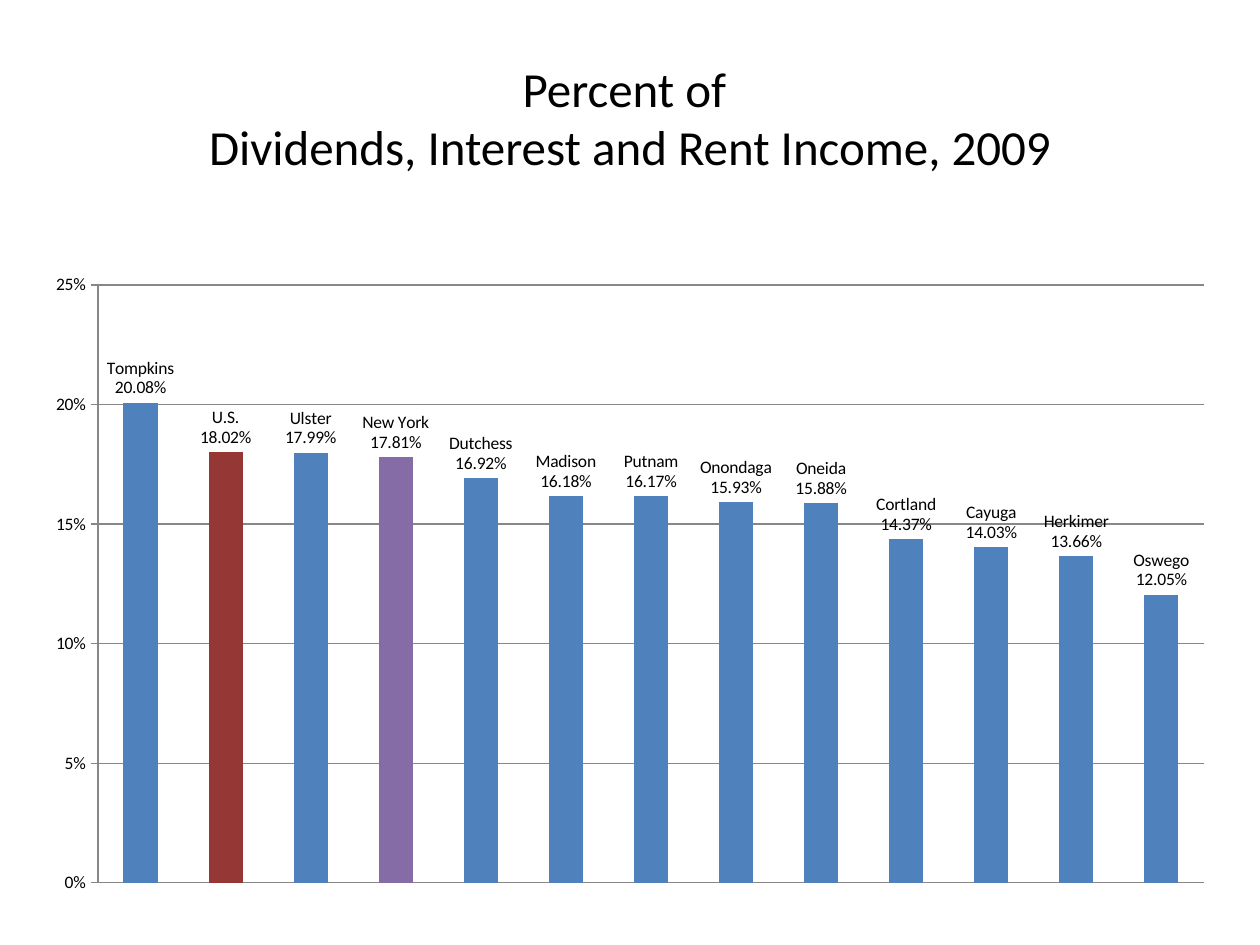
from lxml import etree
from pptx import Presentation
from pptx.chart.data import CategoryChartData
from pptx.dml.color import RGBColor
from pptx.enum.chart import XL_CHART_TYPE, XL_LABEL_POSITION, XL_TICK_MARK
from pptx.enum.text import MSO_ANCHOR, PP_ALIGN
from pptx.oxml.ns import qn
from pptx.util import Pt

COLUMNS = XL_CHART_TYPE.COLUMN_CLUSTERED
OUTSIDE_END = XL_LABEL_POSITION.OUTSIDE_END
TICK_OUTSIDE = XL_TICK_MARK.OUTSIDE
MIDDLE = MSO_ANCHOR.MIDDLE
CENTER = PP_ALIGN.CENTER

PX = 914400 // 126
FONT = "Calibri"
BLACK, GRAY, BLUE, RED, PURPLE = "000000", "878787", "4F81BD", "953735", "866CA7"

INCOME_SHARES = {
    "Tompkins": 0.2008, "U.S.": 0.1802, "Ulster": 0.1799, "New York": 0.1781,
    "Dutchess": 0.1692, "Madison": 0.1618, "Putnam": 0.1617,
    "Onondaga": 0.1593, "Oneida": 0.1588, "Cortland": 0.1437,
    "Cayuga": 0.1403, "Herkimer": 0.1366, "Oswego": 0.1205,
}
HIGHLIGHTS = {"U.S.": RED, "New York": PURPLE}

CHART_BOX = (33, 262, 1196, 644)
PLOT_BOX = (98, 285, 1106, 598)


def rgb(color):
    return RGBColor.from_string(color)


def px(*lengths):
    return [length * PX for length in lengths]


def set_font(font, size):
    font.name = FONT
    font.size = Pt(size)
    font.color.rgb = rgb(BLACK)


def add_title(slide, lines, box):
    title = slide.shapes.title
    title.left, title.top, title.width, title.height = px(*box)
    title.text_frame.vertical_anchor = MIDDLE
    paragraph = title.text_frame.paragraphs[0]
    paragraph.alignment = CENTER
    for index, line in enumerate(lines):
        if index:
            paragraph.add_line_break()
        run = paragraph.add_run()
        run.text = line
        set_font(run.font, 28)


def place_plot(chart):
    """Fix the inner plot area as fractions of the chart frame."""
    plot_area = chart._chartSpace.chart.plotArea
    for old_layout in plot_area.findall(qn("c:layout")):
        plot_area.remove(old_layout)
    layout = etree.Element(qn("c:layout"))
    plot_area.insert(0, layout)
    manual = etree.SubElement(layout, qn("c:manualLayout"))
    left, top, width, height = CHART_BOX
    fractions = {
        "x": (PLOT_BOX[0] - left) / width,
        "y": (PLOT_BOX[1] - top) / height,
        "w": PLOT_BOX[2] / width,
        "h": PLOT_BOX[3] / height,
    }
    settings = {"layoutTarget": "inner", "xMode": "edge", "yMode": "edge", **fractions}
    for name, value in settings.items():
        etree.SubElement(manual, qn(f"c:{name}")).set("val", str(value))


def format_value_axis(axis):
    axis.minimum_scale, axis.maximum_scale, axis.major_unit = 0, 0.25, 0.05
    axis.major_tick_mark = TICK_OUTSIDE
    axis.tick_labels.number_format = "0%"
    axis.tick_labels.number_format_is_linked = False
    axis.has_major_gridlines = True
    for line in (axis.format.line, axis.major_gridlines.format.line):
        line.color.rgb = rgb(GRAY)
        line.width = Pt(0.75)


def format_labels(labels):
    labels.show_value = True
    labels.show_category_name = True
    labels.number_format = "0.00%"
    labels.number_format_is_linked = False
    labels.position = OUTSIDE_END
    set_font(labels.font, 10)
    # Category name and value on separate lines
    separator = etree.Element(qn("c:separator"))
    separator.text = "\n"
    labels._element.find(qn("c:showBubbleSize")).addnext(separator)


def add_column_chart(slide):
    data = CategoryChartData(number_format="0.00%")
    data.categories = list(INCOME_SHARES)
    data.add_series("Series 1", list(INCOME_SHARES.values()))
    chart = slide.shapes.add_chart(COLUMNS, *px(*CHART_BOX), data).chart
    chart.has_legend = False
    chart.has_title = False
    set_font(chart.font, 10)
    chart.category_axis.visible = False
    format_value_axis(chart.value_axis)

    # Columns, with the reference areas highlighted
    plot = chart.plots[0]
    plot.gap_width = 150
    plot.vary_by_categories = False
    series = plot.series[0]
    series.format.fill.solid()
    series.format.fill.fore_color.rgb = rgb(BLUE)
    for index, name in enumerate(INCOME_SHARES):
        if name in HIGHLIGHTS:
            fill = series.points[index].format.fill
            fill.solid()
            fill.fore_color.rgb = rgb(HIGHLIGHTS[name])
    format_labels(series.data_labels)
    place_plot(chart)


def main():
    presentation = Presentation()
    presentation.slide_width, presentation.slide_height = px(1260, 945)
    slide = presentation.slides.add_slide(presentation.slide_layouts[5])
    add_title(slide, ["Percent of ", "Dividends, Interest and Rent Income, 2009"],
              (63, 38, 1134, 158))
    add_column_chart(slide)
    presentation.save("out.pptx")


if __name__ == "__main__":
    main()
